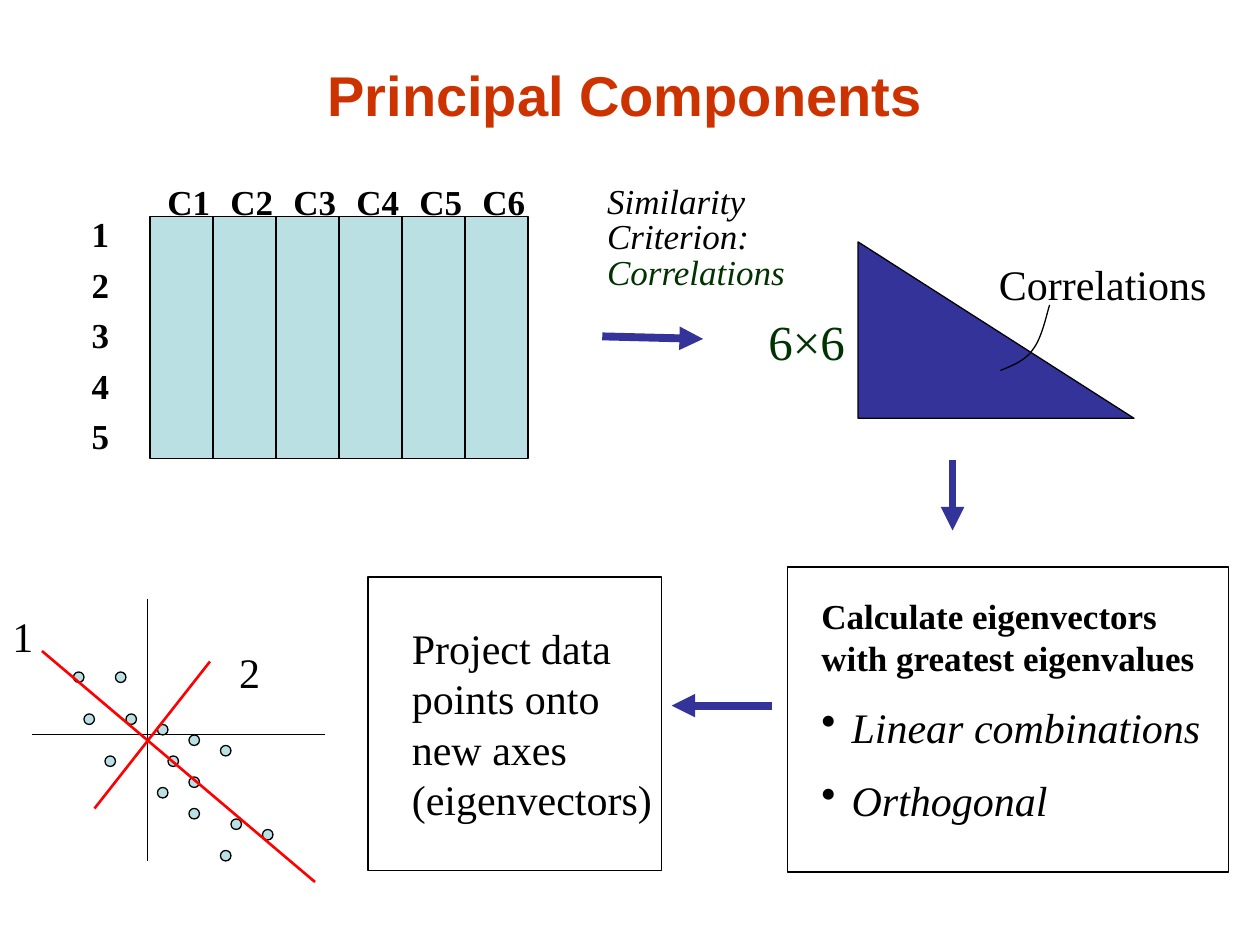
from lxml import etree
from pptx import Presentation, util as u
from pptx.dml.color import RGBColor
from pptx.enum import shapes, text
from pptx.oxml.ns import qn

INK = dict(black="000000", title="CC3300", pale="BBE0E3", navy="333399",
           green="003300", red="FF0000")
SERIF = "Times New Roman"
KIND = shapes.MSO_SHAPE


def rgb(name):
    """Return the named colour."""
    return RGBColor.from_string(INK[name])


def add_text(slide, box, paras, size=24, font=SERIF, bold=False, italic=False,
             color="black", before=0, lead=None, wrap=True):
    """Add a text box of paragraphs and return its text frame."""
    frame = slide.shapes.add_textbox(*map(u.Inches, box)).text_frame
    frame.word_wrap = wrap
    for i, words in enumerate(paras):
        para = frame.paragraphs[0] if i == 0 else frame.add_paragraph()
        para.space_before = u.Pt(before)
        if lead:
            para.line_spacing = lead
        run = para.add_run()
        run.text = words
        face = run.font
        face.name, face.size = font, u.Pt(size)
        face.bold, face.italic = bold, italic
        face.color.rgb = rgb(color)
    return frame


def paint(shape, fill=None):
    """Give a shape its fill and a thin black line."""
    shape.shadow.inherit = False
    if fill:
        shape.fill.solid()
        shape.fill.fore_color.rgb = rgb(fill)
    else:
        shape.fill.background()
    shape.line.color.rgb = rgb("black")
    shape.line.width = u.Pt(0.75)
    return shape


def add_form(slide, kind, box, fill=None):
    """Add a painted preset shape."""
    return paint(slide.shapes.add_shape(kind, *map(u.Inches, box)), fill)


def add_line(slide, ends, color="black", width=0.75, arrow=False):
    """Add a straight line, with an arrowhead at its end if asked."""
    line = slide.shapes.add_connector(
        shapes.MSO_CONNECTOR.STRAIGHT, *map(u.Inches, ends))
    line.line.color.rgb = rgb(color)
    line.line.width = u.Pt(width)
    props = line._element.spPr
    if arrow:
        etree.SubElement(props.find(qn("a:ln")), qn("a:tailEnd"), type="triangle")
    etree.SubElement(props, qn("a:effectLst"))
    return line


def add_title(slide, box):
    """Place the slide title."""
    frame = add_text(slide, box, ["Principal Components"], 32, "Arial",
                     bold=True, color="title")
    frame.vertical_anchor = text.MSO_ANCHOR.MIDDLE
    frame.paragraphs[0].alignment = text.PP_ALIGN.CENTER


def add_matrix(slide, box):
    """Place the data matrix with its row and column labels."""
    x, y, w, h = box
    cols, rows = 6, 5
    grid = add_form(slide, KIND.RECTANGLE, box, "pale")
    add_text(slide, (x - 0.56, y - 0.08, 0.34, 2.03),
             [str(n + 1) for n in range(rows)], 20, bold=True, before=4.8,
             wrap=False)
    for n in range(1, cols):
        at = x + n * w / cols
        line = add_line(slide, (at, y, at, y + h), width=1.5)
        if 2 * n == cols:
            line.begin_connect(grid, 0)
            line.end_connect(grid, 2)
    heads = "\t".join(f"C{n + 1}" for n in range(cols))
    frame = add_text(slide, (x - 0.04, y - 0.34, 3.93, 0.45), [heads], 20,
                     bold=True)
    props = frame.paragraphs[0]._p.get_or_add_pPr()
    props.set("marL", str(u.Inches(0.08)))
    props.set("indent", "0")
    tabs = etree.SubElement(props, qn("a:tabLst"))
    for n in range(cols - 1):
        etree.SubElement(tabs, qn("a:tab"), algn="l",
                         pos=str(u.Inches(0.63 + 0.48 * n)))


def add_rule(slide, box):
    """Place the similarity criterion and its arrow."""
    x, y = box[:2]
    frame = add_text(slide, box, ["Similarity", "Criterion:", "Correlations"],
                     20, italic=True, before=4.6, lead=0.65)
    frame.paragraphs[2].runs[0].font.color.rgb = rgb("green")
    add_line(slide, (x + 0.06, y + 1.19, x + 0.86, y + 1.21), "navy", 4.5, True)


def bend(a, b, c, d, steps=12):
    """Return points along a cubic curve."""
    def mix(t, p, q, r, s):
        """Blend four values at one step of the curve."""
        v = 1 - t
        return v**3 * p + 3 * v * v * t * q + 3 * v * t * t * r + t**3 * s
    return [tuple(mix(n / steps, *vals) for vals in zip(a, b, c, d))
            for n in range(1, steps + 1)]


def add_wedge(slide, box):
    """Place the correlation triangle, its labels and the arrow below."""
    x, y, w, h = box
    add_form(slide, KIND.RIGHT_TRIANGLE, box, "navy")
    knots = [(1.13, 1.02), (1.23, 0.98), (1.33, 0.94), (1.39, 0.85),
             (1.46, 0.76), (1.5, 0.56), (1.52, 0.5)]
    curve = bend(*knots[:4]) + bend(*knots[3:])
    spots = [(u.Inches(x + px), u.Inches(y + py)) for px, py in knots[:1] + curve]
    pen = slide.shapes.build_freeform(*spots[0])
    pen.add_line_segments(spots[1:], close=False)
    paint(pen.convert_to_shape())
    add_text(slide, (x - 0.81, y + 0.5, 0.94, 0.57), ["6×6"], 28, color="green")
    add_text(slide, (x + 1.02, y + 0.08, 1.85, 0.5), ["Correlations"], wrap=False)
    add_line(slide, (x + 0.75, y + 1.73, x + 0.75, y + 2.29), "navy", 4.5, True)


def add_eigen(slide, box):
    """Place the eigenvector box and the arrow leaving it."""
    x, y, w, h = box
    frame = add_text(slide, (x + 0.17, y + 0.17, 3.25, 1.97),
                     ["Calculate eigenvectors with greatest eigenvalues",
                      "Linear combinations", "Orthogonal"], 20, before=13)
    lead, *items = frame.paragraphs
    lead.runs[0].font.bold = True
    for para in items:
        face = para.runs[0].font
        face.size, face.italic = u.Pt(24), True
        props = para._p.get_or_add_pPr()
        props.set("marL", str(u.Inches(0.24)))
        props.set("indent", str(-u.Inches(0.24)))
        etree.SubElement(props, qn("a:buChar"), char="•")
    add_form(slide, KIND.RECTANGLE, box)
    add_line(slide, (x - 0.12, y + 1.1, x - 0.92, y + 1.1), "navy", 4.5, True)


def add_project(slide, box):
    """Place the projection box."""
    x, y = box[:2]
    add_text(slide, (x + 0.25, y + 0.31, 2.11, 1.7),
             ["Project data", "points onto", "new axes", "(eigenvectors)"],
             wrap=False)
    add_form(slide, KIND.RECTANGLE, box)


def add_plot(slide, box):
    """Place the scatter of points with old and new axes."""
    x, y, w, h = box
    unit = 1 / 12
    add_line(slide, (x + 1.17, y, x + 1.17, y + h))
    add_line(slide, (x + 0.25, y + 1.08, x + w, y + 1.08))
    dots = [(12, 11), (15, 12), (16, 15), (18, 17), (18, 20), (22, 21),
            (18, 13), (11, 7), (15, 18), (7, 7), (10, 15), (21, 24),
            (8, 11), (25, 22), (21, 14)]
    for col, row in dots:
        add_form(slide, KIND.OVAL,
                 (x + col * unit, y + row * unit, unit, unit), "pale")
    for ax, ay, bx, by in [(4, 5, 30, 27), (9, 20, 20, 6)]:
        add_line(slide, (x + ax * unit, y + ay * unit, x + bx * unit,
                         y + by * unit), "red", 1.5)
    for name, dx, dy in [("1", 0, 0.05), ("2", 1.8, 0.33)]:
        add_text(slide, (x + dx, y + dy, 0.37, 0.5), [name], wrap=False)


def main():
    """Build the slide and save it."""
    deck = Presentation()
    deck.slide_width, deck.slide_height = u.Inches(10), u.Inches(7.5)
    slide = deck.slides.add_slide(deck.slide_layouts[6])
    add_title(slide, (0.92, 0.25, 8.08, 1))
    add_matrix(slide, (1.19, 1.72, 3, 1.92))
    add_rule(slide, (4.72, 1.48, 1.7, 0.88))
    add_wedge(slide, (6.81, 1.92, 2.19, 1.4))
    add_eigen(slide, (6.25, 4.5, 3.5, 2.42))
    add_project(slide, (2.92, 4.58, 2.33, 2.33))
    add_plot(slide, (0, 4.75, 2.58, 2.08))
    deck.save("out.pptx")


if __name__ == "__main__":
    main()
